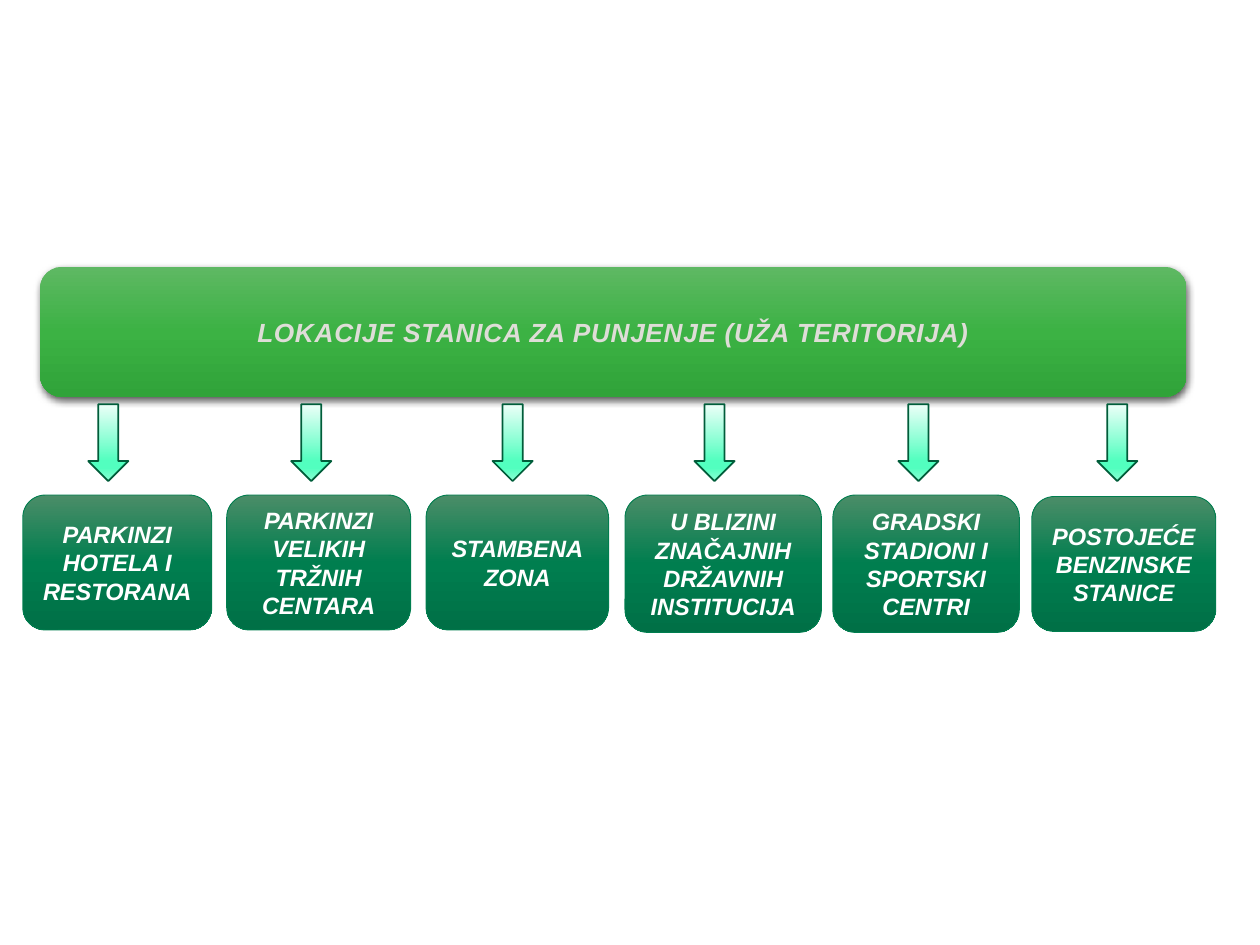
from dataclasses import dataclass

from lxml import etree
from pptx import Presentation
from pptx import util as u
from pptx.dml.color import RGBColor
from pptx.enum import shapes, text
from pptx.oxml import ns

COLORS = {
    "banner_text": "DEDDD7",
    "location_text": "FFFFFF",
    "location_line": "007E4F",
    "arrow_line": "005D3A",
    "shadow": "000000",
}
BANNER_STOPS = [(0, "5EB863"), (50, "3CB244"), (100, "30A339")]
LOCATION_STOPS = [(0, "4B8D68"), (50, "007E4F"), (100, "007046")]
ARROW_STOPS = [(0, "ECFFF8"), (74, "52FFBF"), (83, "52FFBF"), (100, "8CFFD4")]


@dataclass
class Location:
    label: str
    left: float
    width: float
    arrow_left: float
    top: float = 9.98
    height: float = 2.72


LOCATIONS = [
    Location("PARKINZI\nHOTELA I\nRESTORANA", 0.46, 3.81, 1.78),
    Location("PARKINZI VELIKIH\nTRŽNIH CENTARA", 4.57, 3.71, 5.87),
    Location("STAMBENA\nZONA", 8.59, 3.68, 9.93),
    Location("U BLIZINI ZNAČAJNIH\nDRŽAVNIH\nINSTITUCIJA", 12.6, 3.96, 14, height=2.77),
    Location("GRADSKI STADIONI I\nSPORTSKI CENTRI", 16.79, 3.76, 18.11, height=2.77),
    Location("POSTOJEĆE\nBENZINSKE STANICE", 20.8, 3.71, 22.12, top=10.01),
]


def add_gradient_shape(slide, kind, left: float, top: float, width: float,
                       height: float, stops: list):
    shape = slide.shapes.add_shape(kind, u.Cm(left), u.Cm(top), u.Cm(width), u.Cm(height))
    shape.shadow.inherit = False
    shape.fill.gradient()
    shape.fill.gradient_angle = 270
    stop_list = shape.element.spPr.find(".//" + ns.qn("a:gsLst"))
    for old_stop in list(stop_list):
        stop_list.remove(old_stop)
    for position, color in stops:
        stop = etree.SubElement(stop_list, ns.qn("a:gs"), pos=str(position * 1000))
        etree.SubElement(stop, ns.qn("a:srgbClr"), val=color)
    return shape


def set_line(shape, color: str, width: float) -> None:
    shape.line.color.rgb = RGBColor.from_string(color)
    shape.line.width = u.Pt(width)


def write_label(shape, label: str, size: float, color: str) -> None:
    frame = shape.text_frame
    frame.word_wrap = True
    frame.vertical_anchor = text.MSO_ANCHOR.MIDDLE
    frame.text = label
    for paragraph in frame.paragraphs:
        paragraph.alignment = text.PP_ALIGN.CENTER
        for run in paragraph.runs:
            run.font.name = "Arial"
            run.font.size = u.Pt(size)
            run.font.bold = True
            run.font.italic = True
            run.font.color.rgb = RGBColor.from_string(color)


def add_shadow(shape) -> None:
    effects = shape.element.spPr.find(ns.qn("a:effectLst"))
    shadow = etree.SubElement(
        effects, ns.qn("a:outerShdw"), blurRad=str(u.Pt(4.5)), dist=str(u.Pt(1.5)),
        dir="5400000", algn="ctr", rotWithShape="0")
    color = etree.SubElement(shadow, ns.qn("a:srgbClr"), val=COLORS["shadow"])
    etree.SubElement(color, ns.qn("a:alpha"), val="63000")


def add_banner(slide) -> None:
    banner = add_gradient_shape(slide, shapes.MSO_SHAPE.ROUNDED_RECTANGLE,
                                0.81, 5.38, 23.11, 2.62, BANNER_STOPS)
    banner.line.fill.background()
    add_shadow(banner)
    write_label(banner, "LOKACIJE STANICA ZA PUNJENJE (UŽA TERITORIJA)", 15,
                COLORS["banner_text"])
    heading = banner.text_frame.paragraphs[0].runs[0]
    heading._r.get_or_add_rPr().set("spc", "40")


def add_location(slide, location: Location) -> None:
    arrow = add_gradient_shape(slide, shapes.MSO_SHAPE.DOWN_ARROW,
                               location.arrow_left, 8.15, 0.81, 1.55, ARROW_STOPS)
    set_line(arrow, COLORS["arrow_line"], 1)
    box = add_gradient_shape(slide, shapes.MSO_SHAPE.ROUNDED_RECTANGLE, location.left,
                             location.top, location.width, location.height, LOCATION_STOPS)
    set_line(box, COLORS["location_line"], 0.5)
    write_label(box, location.label, 13.5, COLORS["location_text"])


def main() -> None:
    deck = Presentation()
    deck.slide_width, deck.slide_height = u.Cm(25.4), u.Cm(19.05)
    slide = deck.slides.add_slide(deck.slide_layouts[6])
    add_banner(slide)
    for location in LOCATIONS:
        add_location(slide, location)
    deck.save("out.pptx")


if __name__ == "__main__":
    main()
